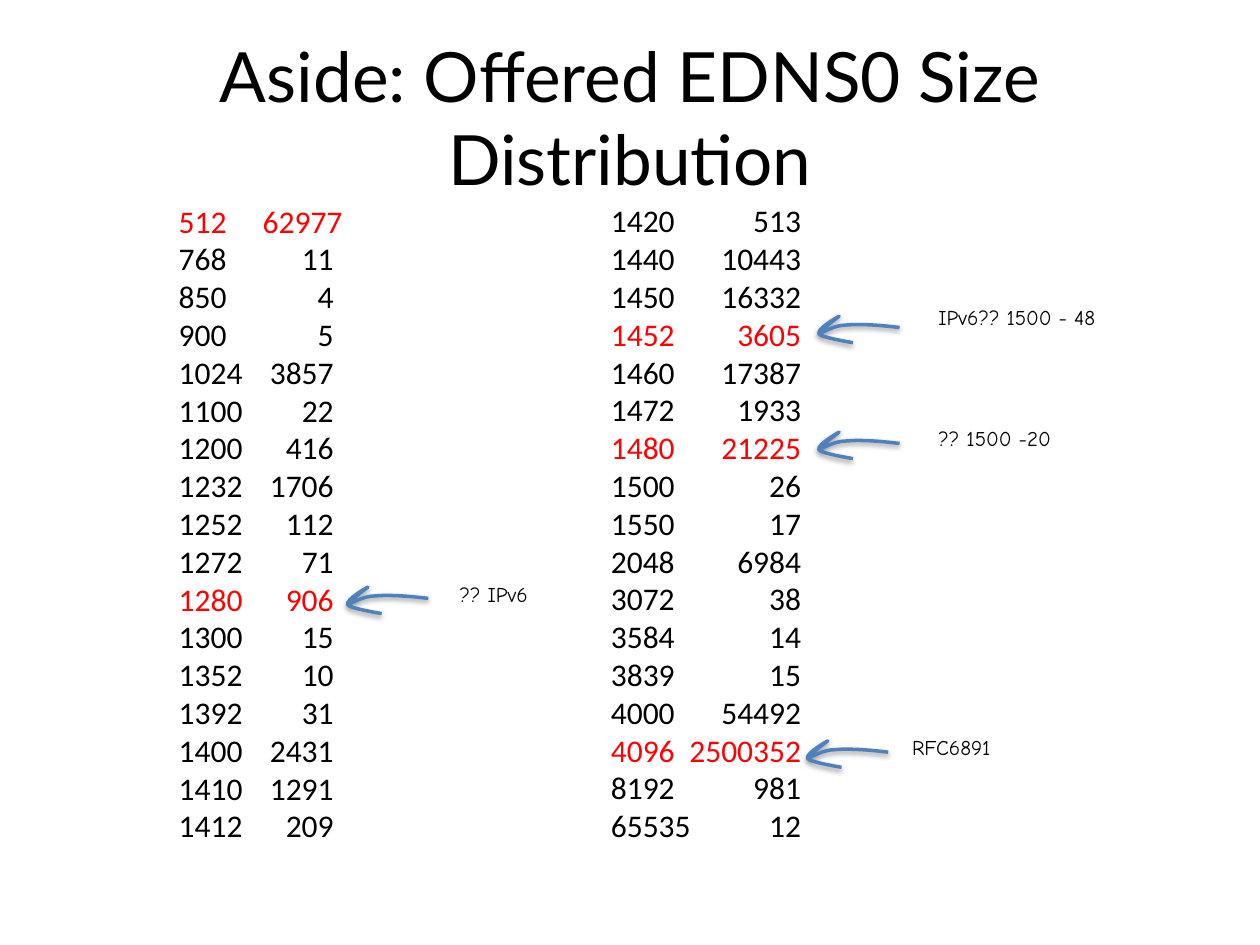
from lxml import etree
from pptx import Presentation
from pptx.dml.color import RGBColor
from pptx.enum.text import MSO_ANCHOR, PP_ALIGN
from pptx.oxml.ns import qn
from pptx.util import Inches, Pt

COLORS = {"text": "000000", "marked": "FF0000", "arrow": "4F81BD", "shadow": "000000"}

TITLE = "Aside: Offered EDNS0 Size Distribution"

# Columns: box (left, top, width, height), right tab position, (size, count) rows
COLUMNS = [
    ((1.32, 1.55, 1.52, 5.55), 1.23, [
        (512, 62977), (768, 11), (850, 4), (900, 5), (1024, 3857), (1100, 22),
        (1200, 416), (1232, 1706), (1252, 112), (1272, 71), (1280, 906), (1300, 15),
        (1352, 10), (1392, 31), (1400, 2431), (1410, 1291), (1412, 209)]),
    ((4.75, 1.55, 1.75, 5.86), 1.51, [
        (1420, 513), (1440, 10443), (1450, 16332), (1452, 3605), (1460, 17387),
        (1472, 1933), (1480, 21225), (1500, 26), (1550, 17), (2048, 6984), (3072, 38),
        (3584, 14), (3839, 15), (4000, 54492), (4096, 2500352), (8192, 981), (65535, 12)]),
]
MARKED_SIZES = {512, 1280, 1452, 1480, 4096}
SHIFTED_TABS = {512: 1.3}

# Notes: wording, box (left, top, width), arrow (left, top)
NOTES = [
    ("RFC6891", (7.14, 5.78, 1.03), (6.41, 5.88)),
    ("?? 1500 -20", (7.35, 3.33, 1.3), (6.5, 3.43)),
    ("?? IPv6", (3.55, 4.57, 0.83), (2.76, 4.66)),
    ("IPv6?? 1500 - 48", (7.35, 2.37, 1.74), (6.5, 2.51)),
]

# Hand-drawn arrow in inches: start, then Bezier curves (control, control, end)
ARROW_START = (0.64, 0.09)
ARROW_CURVES = [
    ((0.48, 0.07), (0.32, 0.06), (0.22, 0.07)),
    ((0.11, 0.07), (0.02, 0.14), (0.01, 0.13)),
    ((0, 0.12), (0.16, 0), (0.16, 0)),
    ((0.16, 0), (-0.02, 0.1), (0, 0.14)),
    ((0.02, 0.17), (0.27, 0.21), (0.27, 0.21)),
]


def rgb(name):
    return RGBColor.from_string(COLORS[name])


def add_text(slide, box, lines, font, size, wrap=False):
    frame = slide.shapes.add_textbox(*map(Inches, box)).text_frame
    frame.word_wrap = wrap
    frame.text = "\n".join(lines)
    for paragraph in frame.paragraphs:
        paragraph.font.name = font
        paragraph.font.size = Pt(size)
        paragraph.font.color.rgb = rgb("text")
    return frame


def set_right_tab(paragraph, position):
    properties = paragraph._p.get_or_add_pPr()
    tabs = etree.Element(qn("a:tabLst"))
    etree.SubElement(tabs, qn("a:tab"), pos=str(Inches(position)), algn="r")
    properties.insert(0, tabs)


def bend_segments(arrow):
    """Turn each straight segment into its Bezier curve."""
    segments = list(arrow._element.iter(qn("a:lnTo")))
    for segment, curve in zip(segments, ARROW_CURVES):
        bend = etree.Element(qn("a:cubicBezTo"))
        for x, y in curve:
            etree.SubElement(bend, qn("a:pt"), x=str(Inches(x)), y=str(Inches(y)))
        segment.getparent().replace(segment, bend)


def add_arrow(slide, left, top):
    builder = slide.shapes.build_freeform(*map(Inches, ARROW_START))
    ends = [tuple(map(Inches, end)) for _, _, end in ARROW_CURVES]
    builder.add_line_segments(ends, close=False)
    arrow = builder.convert_to_shape(Inches(left), Inches(top))
    bend_segments(arrow)
    arrow.fill.background()
    arrow.line.color.rgb = rgb("arrow")
    arrow.line.width = Pt(2)
    # Soft shadow straight below
    arrow.shadow.inherit = False
    effects = arrow._element.spPr.find(qn("a:effectLst"))
    shadow = etree.SubElement(effects, qn("a:outerShdw"), blurRad=str(Pt(3.1)),
                              dist=str(Pt(1.6)), dir="5400000", rotWithShape="0")
    color = etree.SubElement(shadow, qn("a:srgbClr"), val=COLORS["shadow"])
    etree.SubElement(color, qn("a:alpha"), val="38000")


def main():
    deck = Presentation()
    deck.slide_width, deck.slide_height = Inches(10), Inches(7.5)
    slide = deck.slides.add_slide(deck.slide_layouts[6])

    # Title
    title = add_text(slide, (0.5, 0.3, 9, 1.25), [TITLE], "Lato", 39.6, wrap=True)
    title.vertical_anchor = MSO_ANCHOR.MIDDLE
    title.paragraphs[0].alignment = PP_ALIGN.CENTER

    # Size and count columns
    for box, tab, rows in COLUMNS:
        lines = [f"{size}\t{count}" for size, count in rows]
        column = add_text(slide, box, lines, "Calibri", 18, wrap=True)
        for paragraph, (size, _) in zip(column.paragraphs, rows):
            set_right_tab(paragraph, SHIFTED_TABS.get(size, tab))
            if size in MARKED_SIZES:
                paragraph.font.color.rgb = rgb("marked")

    # Notes with their arrows
    for wording, (left, top, width), arrow_place in NOTES:
        add_text(slide, (left, top, width, 0.3), [wording], "Comic Neue", 12)
        add_arrow(slide, *arrow_place)

    deck.save("out.pptx")


if __name__ == "__main__":
    main()
